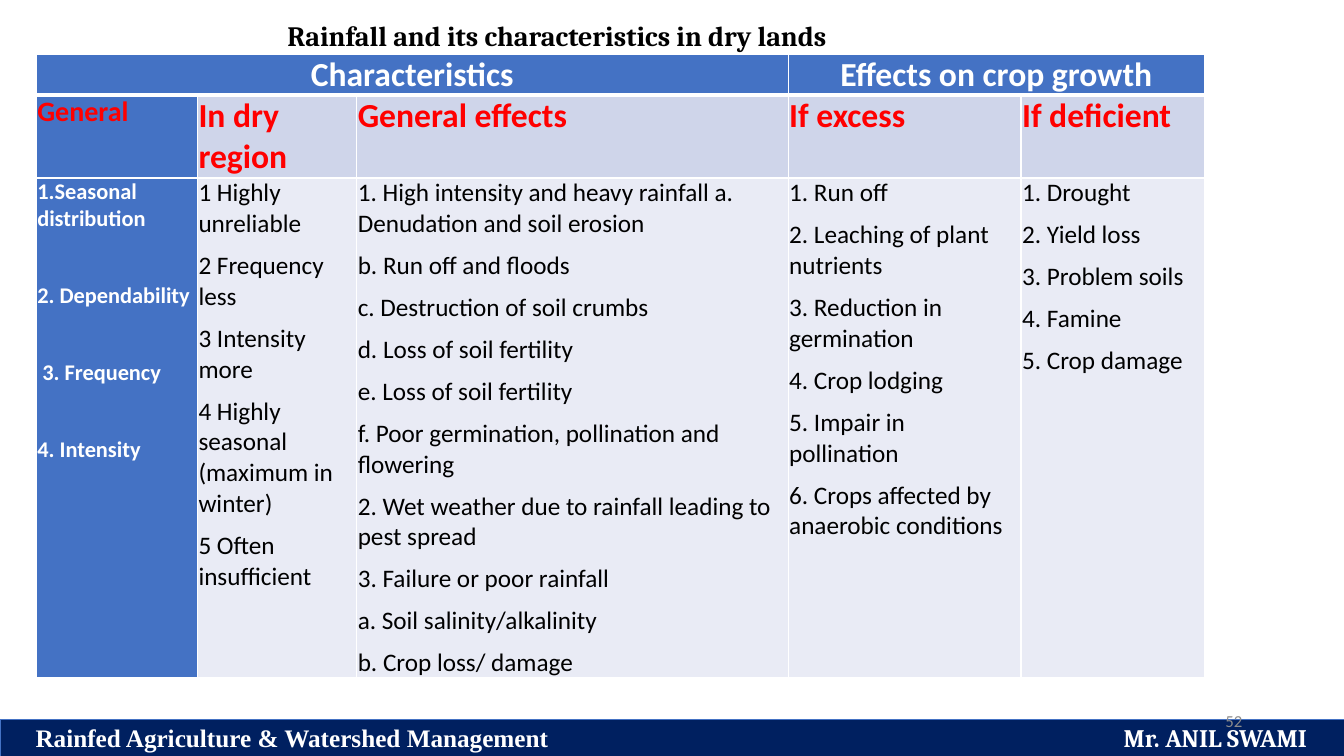
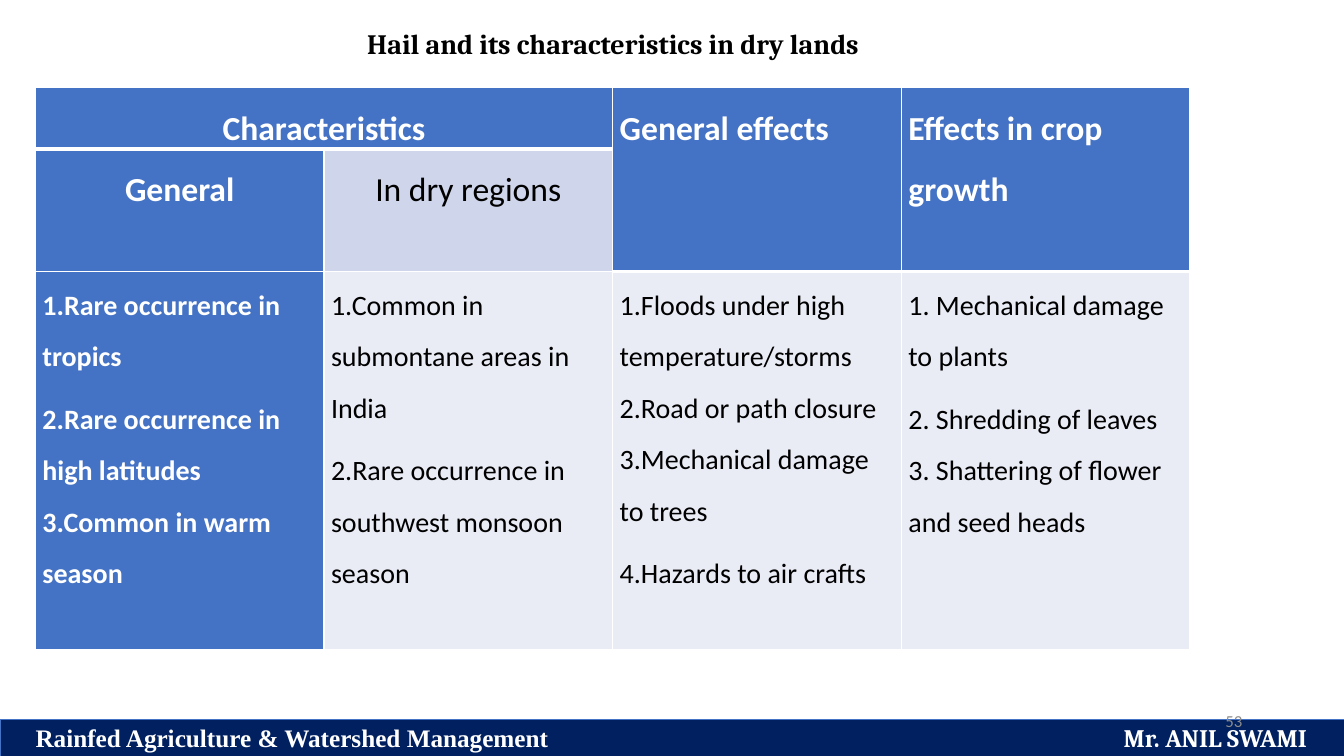
from dataclasses import dataclass

from lxml.etree import SubElement
from pptx import Presentation
from pptx.dml.color import RGBColor
from pptx.enum.shapes import MSO_SHAPE
from pptx.enum.text import MSO_ANCHOR, MSO_AUTO_SIZE, PP_ALIGN
from pptx.oxml.ns import qn
from pptx.util import Inches, Pt

# Colours and fonts
NAVY = RGBColor(0x00, 0x20, 0x60)
BLUE = RGBColor(0x44, 0x72, 0xC4)
LIGHT_BLUE = RGBColor(0xCF, 0xD5, 0xEA)
PALE_BLUE = RGBColor(0xE9, 0xEB, 0xF5)
RED = RGBColor(0xFF, 0x00, 0x00)
GREY = RGBColor(0x8C, 0x8C, 0x8C)
WHITE = RGBColor(0xFF, 0xFF, 0xFF)
BLACK = RGBColor(0x00, 0x00, 0x00)
BODY_FONT, TITLE_FONT, FOOTER_FONT = "Calibri", "Cambria", "Times New Roman"

COURSE = "Rainfed Agriculture & Watershed Management"
AUTHOR = "Mr. ANIL SWAMI"


@dataclass(frozen=True)
class CellStyle:
    fill: RGBColor
    colour: RGBColor
    size: int
    bold: bool = False
    align: PP_ALIGN = PP_ALIGN.LEFT
    gap: float = 8
    heading: bool = False


@dataclass(frozen=True)
class Cell:
    row: int
    column: int
    style: CellStyle
    lines: tuple
    rows: int = 1
    columns: int = 1


class Deck:
    """Holds the shared style and the current slide; lengths are percent of the slide."""

    def __init__(self):
        self.presentation = Presentation()
        self.presentation.slide_width = Inches(13.33)
        self.presentation.slide_height = Inches(7.5)
        self.slide = None

    def across(self, share):
        return int(self.presentation.slide_width * share / 100)

    def down(self, share):
        return int(self.presentation.slide_height * share / 100)

    def box(self, left, top, width, height):
        return self.across(left), self.down(top), self.across(width), self.down(height)

    def add_run(self, paragraph, text, font, size, colour, bold=False):
        run = paragraph.add_run()
        run.text = text
        run.font.name, run.font.size, run.font.bold = font, Pt(size), bold
        run.font.color.rgb = colour

    def new_slide(self, number):
        self.slide = self.presentation.slides.add_slide(self.presentation.slide_layouts[5])
        self.add_footer()
        self.add_number(number)

    def add_title(self, text, area, align):
        title = self.slide.shapes.title
        title.left, title.top, title.width, title.height = self.box(*area)
        frame = title.text_frame
        frame.auto_size = MSO_AUTO_SIZE.NONE
        frame.vertical_anchor = MSO_ANCHOR.TOP
        paragraph = frame.paragraphs[0]
        paragraph.alignment = align
        paragraph.line_spacing = 1.5
        self.add_run(paragraph, text, TITLE_FONT, 20, BLACK, True)

    def add_footer(self):
        band = self.slide.shapes.add_shape(MSO_SHAPE.RECTANGLE, *self.box(0, 95.2, 100, 4.8))
        band.shadow.inherit = False
        band.fill.solid()
        band.fill.fore_color.rgb = NAVY
        band.line.color.rgb = BLUE
        band.line.width = Pt(0.5)
        frame = band.text_frame
        frame.vertical_anchor = MSO_ANCHOR.MIDDLE
        frame.margin_left = frame.margin_right = self.across(2.65)
        frame.margin_top = frame.margin_bottom = 0
        paragraph = frame.paragraphs[0]
        paragraph.alignment = PP_ALIGN.LEFT
        # A right tab carries the author to the far edge
        tabs = SubElement(paragraph._p.get_or_add_pPr(), qn("a:tabLst"))
        SubElement(tabs, qn("a:tab"), pos=str(self.across(94.6)), algn="r")
        self.add_run(paragraph, COURSE + "\t", FOOTER_FONT, 18, WHITE, True)
        self.add_run(paragraph, AUTHOR, TITLE_FONT, 18, WHITE, True)

    def add_number(self, number):
        frame = self.slide.shapes.add_textbox(*self.box(70.67, 92.67, 22.5, 5.33)).text_frame
        frame.word_wrap = True
        frame.vertical_anchor = MSO_ANCHOR.MIDDLE
        paragraph = frame.paragraphs[0]
        paragraph.alignment = PP_ALIGN.RIGHT
        self.add_run(paragraph, str(number), BODY_FONT, 12, GREY)

    def add_table(self, left, top, widths, heights, cells, inset, spacing):
        area = self.box(left, top, sum(widths), sum(heights))
        table = self.slide.shapes.add_table(len(heights), len(widths), *area).table
        table.first_row = table.horz_banding = False
        for column, width in zip(table.columns, widths):
            column.width = self.across(width)
        for row, height in zip(table.rows, heights):
            row.height = self.down(height)

        owners = {(row, column): cell for cell in cells
                  for row in range(cell.row, cell.row + cell.rows)
                  for column in range(cell.column, cell.column + cell.columns)}
        for (row, column), owner in owners.items():
            target = table.cell(row, column)
            above, below = owners.get((row - 1, column)), owners.get((row + 1, column))
            self.add_borders(target, self.edge(above, owner), self.edge(owner, below))
            target.fill.solid()
            target.fill.fore_color.rgb = owner.style.fill
        for cell in cells:
            target = table.cell(cell.row, cell.column)
            if cell.rows * cell.columns > 1:
                target.merge(table.cell(cell.row + cell.rows - 1,
                                        cell.column + cell.columns - 1))
            self.fill_cell(target, cell, inset, spacing)

    def edge(self, upper, lower):
        """Headings are closed by a thick rule, all else by a thin one."""
        return 3 if upper and upper.style.heading and upper is not lower else 1

    def add_borders(self, target, top, bottom):
        properties = target._tc.get_or_add_tcPr()
        for side, width in (("L", 1), ("R", 1), ("T", top), ("B", bottom)):
            line = SubElement(properties, qn(f"a:ln{side}"), w=str(Pt(width)))
            fill = SubElement(line, qn("a:solidFill"))
            SubElement(fill, qn("a:srgbClr"), val=str(WHITE))

    def fill_cell(self, target, cell, inset, spacing):
        target.margin_left = target.margin_right = Inches(inset)
        target.margin_top = target.margin_bottom = 0
        style, frame = cell.style, target.text_frame
        for index, text in enumerate(cell.lines):
            paragraph = frame.add_paragraph() if index else frame.paragraphs[0]
            paragraph.alignment = style.align
            paragraph.line_spacing = spacing
            paragraph.space_after = Pt(style.gap)
            self.add_run(paragraph, text, BODY_FONT, style.size, style.colour, style.bold)


# Cell styles
HEADING = CellStyle(BLUE, WHITE, 24, True, heading=True)
HEADING_CENTRED = CellStyle(BLUE, WHITE, 24, True, PP_ALIGN.CENTER, heading=True)
SIDE_RED = CellStyle(BLUE, RED, 20, True)
SUB_RED = CellStyle(LIGHT_BLUE, RED, 24, True)
SIDE_SPACED = CellStyle(BLUE, WHITE, 16, True, gap=35.5)
BODY = CellStyle(PALE_BLUE, BLACK, 18)
SIDE_CENTRED = CellStyle(BLUE, WHITE, 24, True, PP_ALIGN.CENTER)
SUB_CENTRED = CellStyle(LIGHT_BLUE, BLACK, 24, align=PP_ALIGN.CENTER)
SIDE_LARGE = CellStyle(BLUE, WHITE, 20, True)
BODY_LARGE = CellStyle(PALE_BLUE, BLACK, 20)

RAINFALL = [
    Cell(0, 0, HEADING_CENTRED, ("Characteristics",), columns=3),
    Cell(0, 3, HEADING_CENTRED, ("Effects on crop growth",), columns=2),
    Cell(1, 0, SIDE_RED, ("General",)),
    Cell(1, 1, SUB_RED, ("In dry region",)),
    Cell(1, 2, SUB_RED, ("General effects",)),
    Cell(1, 3, SUB_RED, ("If excess",)),
    Cell(1, 4, SUB_RED, ("If deficient",)),
    Cell(2, 0, SIDE_SPACED, ("1.Seasonal distribution", "2. Dependability",
                             " 3. Frequency", "4. Intensity")),
    Cell(2, 1, BODY, ("1 Highly unreliable", "2 Frequency less", "3 Intensity more",
                      "4 Highly seasonal (maximum in winter)", "5 Often insufficient")),
    Cell(2, 2, BODY, (
        "1. High intensity and heavy rainfall a. Denudation and soil erosion",
        "b. Run off and floods", "c. Destruction of soil crumbs",
        "d. Loss of soil fertility", "e. Loss of soil fertility",
        "f. Poor germination, pollination and flowering",
        "2. Wet weather due to rainfall leading to pest spread",
        "3. Failure or poor rainfall", "a. Soil salinity/alkalinity",
        "b. Crop loss/ damage")),
    Cell(2, 3, BODY, ("1. Run off", "2. Leaching of plant nutrients",
                      "3. Reduction in germination", "4. Crop lodging",
                      "5. Impair in pollination",
                      "6. Crops affected by anaerobic conditions")),
    Cell(2, 4, BODY, ("1. Drought", "2. Yield loss", "3. Problem soils",
                      "4. Famine", "5. Crop damage")),
]

HAIL = [
    Cell(0, 0, HEADING_CENTRED, ("Characteristics",), columns=2),
    Cell(0, 2, HEADING, ("General effects",), rows=2),
    Cell(0, 3, HEADING, ("Effects in crop growth",), rows=2),
    Cell(1, 0, SIDE_CENTRED, ("General",)),
    Cell(1, 1, SUB_CENTRED, ("In dry regions",)),
    Cell(2, 0, SIDE_LARGE, ("1.Rare occurrence in tropics",
                            "2.Rare occurrence in high latitudes 3.Common in warm season")),
    Cell(2, 1, BODY_LARGE, ("1.Common in submontane areas in India",
                            "2.Rare occurrence in southwest monsoon season")),
    Cell(2, 2, BODY_LARGE, (
        "1.Floods under high temperature/storms 2.Road or path closure "
        "3.Mechanical damage to trees",
        "4.Hazards to air crafts")),
    Cell(2, 3, BODY_LARGE, ("1. Mechanical damage to plants",
                            "2. Shredding of leaves 3. Shattering of flower and seed heads")),
]


def main():
    deck = Deck()

    # Rainfall
    deck.new_slide(52)
    deck.add_title("Rainfall and its characteristics in dry lands",
                   (20.63, -0.4, 59, 7.33), PP_ALIGN.LEFT)
    deck.add_table(2.7, 7.2, [12, 11.85, 32.1, 17.33, 13.65], [5.4, 10.95, 66.1],
                   RAINFALL, inset=0.01, spacing=1.0)

    # Hail
    deck.new_slide(53)
    deck.add_title("Hail and its characteristics in dry lands",
                   (20.63, 0.67, 50, 7.33), PP_ALIGN.CENTER)
    deck.add_table(2.63, 11.6, [21.48] * 4, [8.13, 16.2, 50],
                   HAIL, inset=0.07, spacing=1.5)

    deck.presentation.save("out.pptx")


if __name__ == "__main__":
    main()
